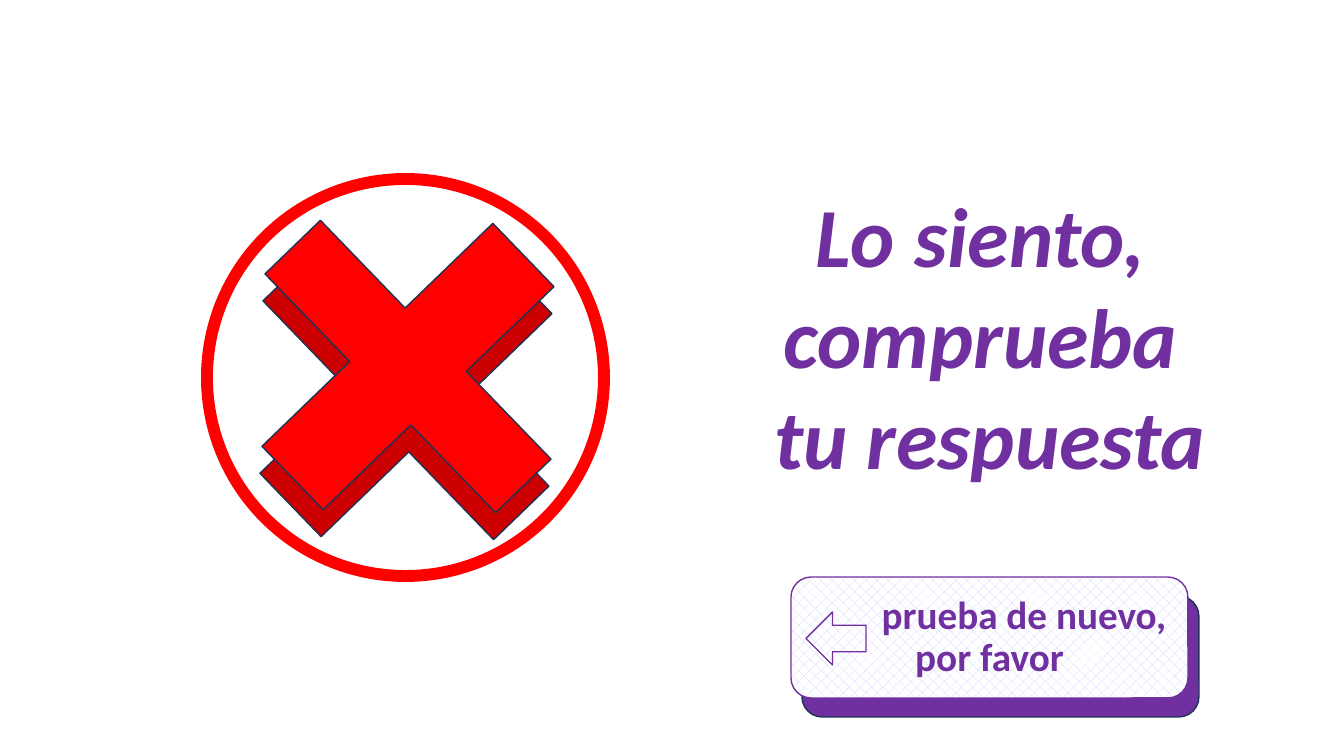
import dataclasses

import pptx
import pptx.dml.color
import pptx.enum.dml
import pptx.enum.shapes
import pptx.enum.text
import pptx.util

SHAPE = pptx.enum.shapes.MSO_SHAPE
CENTER = pptx.enum.text.PP_ALIGN.CENTER
MIDDLE = pptx.enum.text.MSO_ANCHOR.MIDDLE


@dataclasses.dataclass(frozen=True)
class Theme:
    font: str = "Calibri"
    purple: str = "7030A0"
    red: str = "FF0000"
    dark_red: str = "CC0000"
    navy: str = "1E3256"
    lilac: str = "CCCCFF"
    white: str = "FFFFFF"
    message_size: int = 60
    button_size: int = 28
    thin: float = 1
    ring: float = 8.5


THEME = Theme()


def px(n):
    return pptx.util.Emu(round(n * 914400 / 100.8))


def rgb(value):
    return pptx.dml.color.RGBColor.from_string(value)


def add_shape(slide, kind, box, line, fill=None, width=THEME.thin):
    sp = slide.shapes.add_shape(kind, *map(px, box))
    sp.shadow.inherit = False
    sp.line.color.rgb = rgb(line)
    sp.line.width = pptx.util.Pt(width)
    if fill:
        sp.fill.solid()
        sp.fill.fore_color.rgb = rgb(fill)
    else:
        sp.fill.background()
    return sp


def add_run(p, text, size, italic=False):
    p.alignment = CENTER
    r = p.add_run()
    r.text = text
    r.font.name = THEME.font
    r.font.size = pptx.util.Pt(size)
    r.font.bold = True
    r.font.italic = italic
    r.font.color.rgb = rgb(THEME.purple)


def add_message(slide, box, lines):
    tf = slide.shapes.add_textbox(*map(px, box)).text_frame
    tf.word_wrap = False
    for i, line in enumerate(lines):
        p = tf.add_paragraph() if i else tf.paragraphs[0]
        add_run(p, line, THEME.message_size, italic=True)


def add_wrong_mark(slide, box):
    """Ring around a tilted cross with a darker cross behind it."""
    x, y, w, h = box
    add_shape(slide, SHAPE.FLOWCHART_CONNECTOR, box, THEME.red, width=THEME.ring)
    for dx, dy, fill in ((33, 54, THEME.dark_red), (35, 27, THEME.red)):
        cross = add_shape(slide, SHAPE.CROSS, (x + dx, y + dy, w - 65, h - 76),
                          THEME.navy, fill)
        cross.adjustments[0] = 0.38
        cross.rotation = 46


def add_retry_button(slide, box, text):
    x, y, w, h = box
    add_shape(slide, SHAPE.ROUNDED_RECTANGLE, (x + 11, y + 19, w, h),
              THEME.navy, THEME.purple)

    face = add_shape(slide, SHAPE.ROUNDED_RECTANGLE, box, THEME.purple)
    face.fill.patterned()
    face.fill.pattern = pptx.enum.dml.MSO_PATTERN.PERCENT_25
    face.fill.fore_color.rgb = rgb(THEME.lilac)
    face.fill.back_color.rgb = rgb(THEME.white)
    tf = face.text_frame
    tf.word_wrap = True
    tf.vertical_anchor = MIDDLE
    p = tf.paragraphs[0]
    p.line_spacing = 0.9
    add_run(p, text, THEME.button_size)
    # The first line makes room for the arrow.
    pPr = p._p.get_or_add_pPr()
    pPr.set("marL", "0")
    pPr.set("indent", str(px(69)))

    add_shape(slide, SHAPE.LEFT_ARROW, (x + 15, y + 35, 60, 53), THEME.purple)


def main():
    prs = pptx.Presentation()
    prs.slide_width, prs.slide_height = px(1344), px(756)
    slide = prs.slides.add_slide(prs.slide_layouts[6])
    add_message(slide, (762, 179, 456, 316),
                ("Lo siento, ", "comprueba ", "tu respuesta"))
    add_wrong_mark(slide, (207, 179, 397, 397))
    add_retry_button(slide, (791, 577, 397, 121), "prueba de nuevo, por favor")
    prs.save("out.pptx")


if __name__ == "__main__":
    main()
